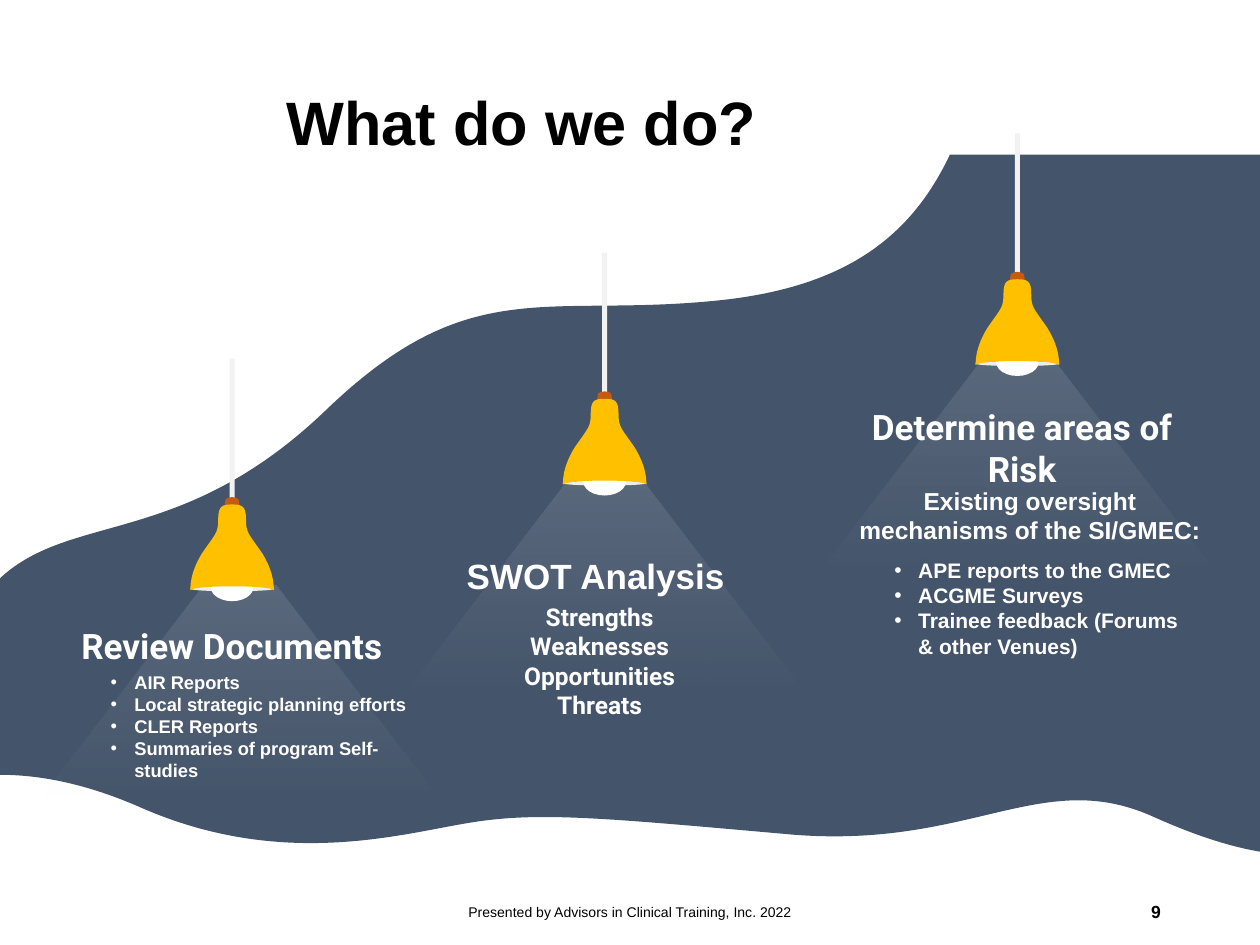
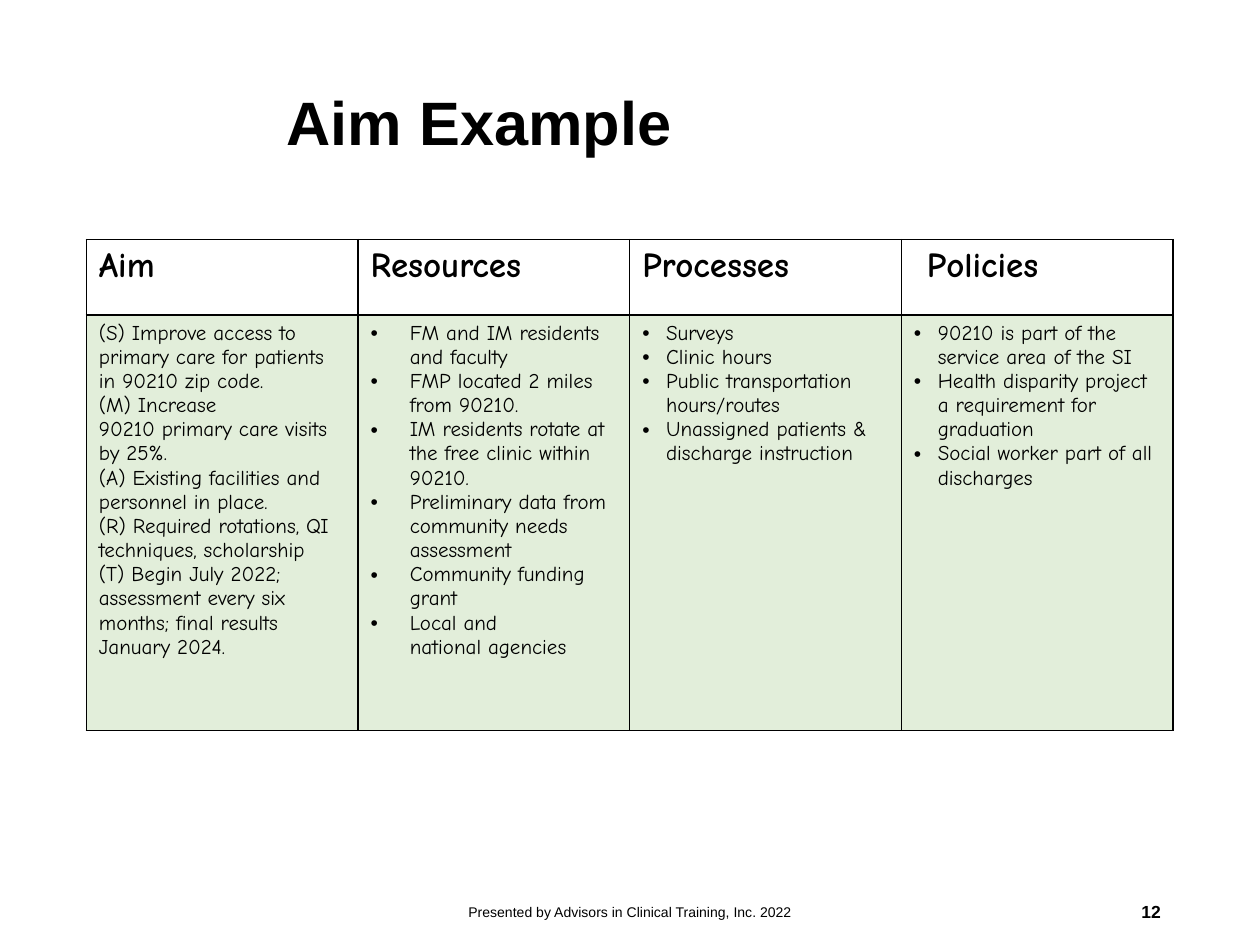
from lxml import etree
from pptx import Presentation
from pptx.dml.color import RGBColor
from pptx.enum.shapes import MSO_SHAPE as SHAPE
from pptx.enum.text import MSO_ANCHOR as ANCHOR, PP_ALIGN as ALIGN
from pptx.oxml.ns import qn
from pptx.util import Cm, Pt

BLACK, WHITE = "000000", "FFFFFF"
SLATE, AMBER, RUST = "44546A", "FFC000", "C55A11"
ROD, RIM, GREEN = "F2F2F2", "EDEDED", "70AD47"
FOOTER = "Presented by Advisors in Clinical Training, Inc. 2022"
NBSP = chr(160)

WAVE_TOP = [
    (19.15, 0), (18.39, 1.6), (17.12, 2.65), (14.55, 2.93),
    (11, 3.31), (9.5, 2.34), (6.58, 5.14),
    (3.68, 7.93), (1.45, 7.19), (0, 8.54)]
WAVE_BOTTOM = [
    (0, 12.5), (0.81, 12.5), (1.75, 12.68), (2.84, 13.16),
    (5.69, 14.41), (8.08, 13.69), (9.45, 13.47),
    (10.82, 13.24), (12.07, 13.36), (15.8, 13.69),
    (19.53, 14.05), (20.96, 12.32), (23.24, 13.34),
    (24.26, 13.8), (24.94, 13.97), (25.4, 14.05)]
CAP_HALF = [
    (0, 0), (-0.05, 0), (-0.13, 0.03), (-0.13, 0.05),
    (-0.15, 0.08), (-0.15, 0.23), (-0.15, 0.23)]
SHADE_HALF = [
    (0, 0), (-0.2, 0), (-0.28, 0.03), (-0.28, 0.3),
    (-0.28, 0.58), (-0.33, 0.58), (-0.61, 0.99),
    (-0.86, 1.4), (-0.84, 1.68), (-0.84, 1.73),
    (-0.81, 1.68), (-0.46, 1.65), (0, 1.65)]

TABLE = [
    ("Aim", 0, 0, [
        "(S) Improve access to primary care for patients in 90210 zip code.",
        f"(M) Increase 90210{NBSP}primary care visits by 25%.",
        "(A) Existing facilities and personnel in place.",
        "(R) Required rotations, QI techniques, scholarship",
        f"(T) Begin July 2022; assessment every six months;{NBSP}final results January 2024."]),
    ("Resources", 0, 0.79, [
        "FM and IM residents and faculty",
        "FMP located 2 miles from 90210.",
        f"IM residents rotate at the free clinic{NBSP}within 90210.",
        "Preliminary data from community needs assessment",
        "Community funding grant",
        f"Local and national{NBSP}agencies"]),
    ("Processes", 0, 0.48, [
        "Surveys",
        "Clinic hours",
        "Public transportation hours/routes",
        "Unassigned patients & discharge instruction"]),
    ("Policies", 0.26, 0.48, [
        "90210 is part of the service area of the SI",
        "Health disparity project a requirement for graduation",
        "Social worker part of all discharges"])]


def rgb(hex_color):
    """Turn a hex string into a colour."""
    return RGBColor.from_string(hex_color)


def set_alpha(color_el, percent):
    """Give a colour element an opacity."""
    etree.SubElement(color_el, qn("a:alpha")).set("val", str(percent * 1000))


def paint(sp, color):
    """Fill a shape plainly, without line or shadow."""
    sp.shadow.inherit = False
    sp.line.fill.background()
    sp.fill.solid()
    sp.fill.fore_color.rgb = rgb(color)


def curves(pts):
    """Split a chain of points into cubic segments."""
    return [pts[i:i + 3] for i in range(1, len(pts), 3)]


def mirrored(half):
    """Complete a left half outline with its reflection."""
    right = [(-x, y) for x, y in reversed(half)]
    bridge = [[right[0]]] if right[0] != half[-1] else []
    return curves(half) + bridge + curves(right)


def outline(shapes, x, y, start, segments, color):
    """Draw a closed outline of lines and cubic curves relative to a point."""
    anchors = [start] + [segment[-1] for segment in segments]
    emu = [(Cm(x + px), Cm(y + py)) for px, py in anchors]
    fb = shapes.build_freeform(*emu[0], scale=1.0)
    fb.add_line_segments(emu[1:], close=True)
    sp = fb.convert_to_shape()
    left, top = (min(axis) for axis in zip(*anchors))
    lines = list(sp._element.iter(qn("a:lnTo")))
    for line, segment in zip(lines, segments):
        if len(segment) == 3:
            bezier = etree.Element(qn("a:cubicBezTo"))
            for px, py in segment:
                pt = etree.SubElement(bezier, qn("a:pt"))
                pt.set("x", str(Cm(px - left)))
                pt.set("y", str(Cm(py - top)))
            line.getparent().replace(line, bezier)
    paint(sp, color)
    return sp


def preset(shapes, kind, box, color):
    """Draw a plain preset shape."""
    paint(shapes.add_shape(kind, *map(Cm, box)), color)


def write(tf, lines, font, size, color, bold=True, align=ALIGN.LEFT,
          indent=0.0, bullet=False, spacing=None):
    """Write one paragraph per line, bulleted if asked."""
    for i, line in enumerate(lines):
        p = tf.paragraphs[0] if i == 0 else tf.add_paragraph()
        p.alignment = align
        if spacing:
            p.line_spacing = spacing
        if indent:
            p_pr = p._p.get_or_add_pPr()
            p_pr.set("marL", str(Cm(indent)))
            if bullet:
                p_pr.set("indent", str(-Cm(0.48 if indent > 1 else indent)))
                etree.SubElement(p_pr, qn("a:buFont")).set("typeface", "Arial")
                etree.SubElement(p_pr, qn("a:buChar")).set("char", "•")
        r = p.add_run()
        r.text = line
        r.font.name, r.font.size, r.font.bold = font, Pt(size), bold
        r.font.color.rgb = rgb(color)


def text(s, box, lines, font, size, color, anchor=ANCHOR.TOP, inset=False, **style):
    """Add a wrapping text box."""
    tf = s.shapes.add_textbox(*map(Cm, box)).text_frame
    tf.word_wrap = True
    tf.vertical_anchor = anchor
    if not inset:
        tf.margin_left = tf.margin_right = tf.margin_top = tf.margin_bottom = 0
    write(tf, lines, font, size, color, **style)


def frame(s, title, number):
    """Add the title, footer and slide number."""
    common = dict(font="Arial", color=BLACK, anchor=ANCHOR.MIDDLE, inset=True)
    text(s, (5.53, 0.69, 18.14, 3.68), [title], size=35, spacing=0.9, **common)
    text(s, (8.41, 17.88, 8.59, 1.02), [FOOTER], size=8, bold=False,
         align=ALIGN.CENTER, **common)
    text(s, (17.93, 17.87, 5.72, 1.02), [number], size=10, align=ALIGN.RIGHT, **common)


def beam(s, x, y):
    """Draw a fading cone of light below a point."""
    sides = [[(0.74, 0)], [(4.14, 4.44)], [(-4.14, 4.44)], [(-0.74, 0)]]
    sp = outline(s.shapes, x, y, (-0.74, 0), sides, WHITE)
    sp.fill.gradient()
    sp.fill.gradient_angle = 270
    for stop in sp.fill.gradient_stops:
        stop.color.rgb = rgb(WHITE)
    for el, percent in zip(sp._element.iter(qn("a:srgbClr")), (12, 0)):
        set_alpha(el, percent)


def lamp(s, x, y, beam_shift):
    """Hang a lit lamp from a point."""
    beam(s, x + beam_shift, y + 4.57)
    preset(s.shapes, SHAPE.RECTANGLE, (x - 0.05, y, 0.1, 3.18), ROD)
    head = s.shapes.add_group_shape().shapes
    preset(head, SHAPE.OVAL, (x - 0.85, y + 4.59, 1.7, 0.1), RIM)
    preset(head, SHAPE.OVAL, (x - 0.43, y + 4.33, 0.86, 0.56), WHITE)
    outline(head, x, y + 2.79, CAP_HALF[0], mirrored(CAP_HALF), RUST)
    outline(head, x, y + 2.94, SHADE_HALF[0], mirrored(SHADE_HALF), AMBER)


def topic(s, x, y, heading, details, beam_shift=0.0):
    """Place a lamp with its heading and details below."""
    lamp(s, x, y, beam_shift)
    for (dx, dy, w, h), lines, font, size, style in [heading] + details:
        text(s, (x + dx, y + dy, w, h), lines, font, size, WHITE, **style)


def lamps_slide(prs):
    """Build the slide with three lamps on a wave."""
    s = prs.slides.add_slide(prs.slide_layouts[6])
    wave = (curves(WAVE_TOP) + [[WAVE_BOTTOM[0]]] + curves(WAVE_BOTTOM)
            + [[(25.4, 0)], [WAVE_TOP[0]]])
    outline(s.shapes, 0, 3.12, WAVE_TOP[0], wave, SLATE)
    centre = dict(align=ALIGN.CENTER)
    head = dict(anchor=ANCHOR.BOTTOM, align=ALIGN.CENTER)
    topic(s, 4.68, 7.23,
          ((-3.33, 5.35, 6.65, 0.86), ["Review Documents"], "Roboto", 20, head),
          [((-3.72, 6.3, 7.72, 2.24),
            ["AIR Reports", "Local strategic planning efforts", "CLER Reports",
             "Summaries of program Self-studies"],
            "Arial", 10.5, dict(indent=1.75, bullet=True))],
          beam_shift=0.15)
    topic(s, 12.19, 5.1,
          ((-2.78, 6.07, 6.65, 0.86), ["SWOT Analysis"], "Arial", 20,
           dict(anchor=ANCHOR.BOTTOM)),
          [((-2.6, 7.03, 5, 2.39),
            ["Strengths", "Weaknesses", "Opportunities", "Threats"],
            "Roboto", 14, centre)])
    topic(s, 20.51, 2.69,
          ((-3.23, 5.48, 6.65, 1.7), ["Determine areas of Risk"], "Roboto", 20, head),
          [((-3.43, 7.1, 7.37, 1.19),
            ["Existing oversight mechanisms of the SI/GMEC:"], "Arial", 14, centre),
           ((-2.48, 8.55, 5.84, 2.06),
            ["APE reports to the GMEC", "ACGME Surveys",
             "Trainee feedback (Forums & other Venues)"],
            "Arial", 12, dict(indent=0.48, bullet=True))])
    frame(s, "What do we do?", "9")


def border(cell):
    """Rule all four sides of a cell in black."""
    tc_pr = cell._tc.get_or_add_tcPr()
    for i, side in enumerate(("lnL", "lnR", "lnT", "lnB")):
        ln = etree.Element(qn(f"a:{side}"), w=str(Pt(1)))
        fill = etree.SubElement(ln, qn("a:solidFill"))
        etree.SubElement(fill, qn("a:srgbClr")).set("val", BLACK)
        tc_pr.insert(i, ln)


def aim_table(s, x, y, w, heights):
    """Draw the table of aims, one column per heading."""
    table = s.shapes.add_table(2, len(TABLE), Cm(x), Cm(y), Cm(w), Cm(sum(heights))).table
    table.first_row = table.horz_banding = False
    for row, height in zip(table.rows, heights):
        row.height = Cm(height)
    for col, (heading, shift, indent, lines) in enumerate(TABLE):
        top, body = table.cell(0, col), table.cell(1, col)
        top.fill.background()
        body.fill.solid()
        body.fill.fore_color.rgb = rgb(GREEN)
        set_alpha(next(body._tc.iter(qn("a:srgbClr"))), 20)
        write(top.text_frame, [heading], "Comic Neue", 20, BLACK, indent=shift)
        write(body.text_frame, lines, "Comic Neue", 12, BLACK, bold=False,
              indent=indent, bullet=True)
        border(top)
        border(body)


def table_slide(prs):
    """Build the slide with the example aim."""
    s = prs.slides.add_slide(prs.slide_layouts[6])
    aim_table(s, 1.74, 4.83, 21.91, (1.52, 8.38))
    frame(s, "Aim Example", "12")


def main():
    """Build and save the presentation."""
    prs = Presentation()
    prs.slide_width, prs.slide_height = Cm(25.4), Cm(19.05)
    lamps_slide(prs)
    table_slide(prs)
    prs.save("out.pptx")


if __name__ == "__main__":
    main()
